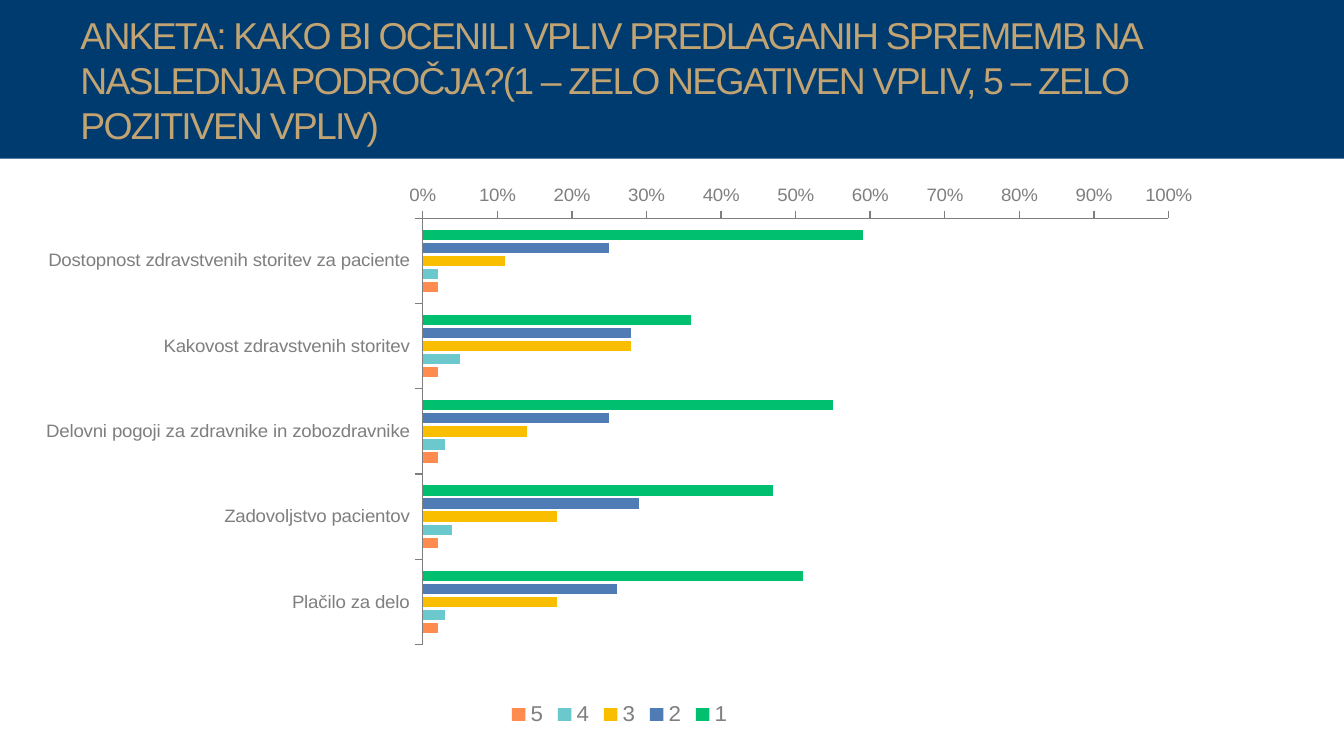
from lxml import etree
from pptx import Presentation
from pptx.chart.data import CategoryChartData
from pptx.dml.color import RGBColor
from pptx.enum.chart import (XL_CHART_TYPE, XL_LEGEND_POSITION,
                             XL_TICK_LABEL_POSITION, XL_TICK_MARK)
from pptx.enum.shapes import MSO_SHAPE
from pptx.enum.text import MSO_ANCHOR
from pptx.oxml.ns import qn
from pptx.util import Inches, Pt

RECT = MSO_SHAPE.RECTANGLE
MIDDLE = MSO_ANCHOR.MIDDLE
BAR = XL_CHART_TYPE.BAR_CLUSTERED
BOTTOM = XL_LEGEND_POSITION.BOTTOM
LOW = XL_TICK_LABEL_POSITION.LOW
OUTSIDE, NO_TICK = XL_TICK_MARK.OUTSIDE, XL_TICK_MARK.NONE

NAVY = RGBColor(0x00, 0x3B, 0x70)
GOLD = RGBColor(0xC2, 0xA3, 0x72)
GREY = RGBColor(0x7F, 0x7F, 0x7F)
INK = RGBColor(0x2F, 0x2B, 0x20)
GREEN = RGBColor(0x00, 0xBF, 0x6F)
BLUE = RGBColor(0x50, 0x7C, 0xB6)
YELLOW = RGBColor(0xF9, 0xBE, 0x00)
TEAL = RGBColor(0x6B, 0xC8, 0xCD)
ORANGE = RGBColor(0xFF, 0x8B, 0x4F)

WIDTH = 10
HEIGHT = WIDTH * 9 / 16

TITLE = ("ANKETA: KAKO BI OCENILI VPLIV PREDLAGANIH SPREMEMB NA NASLEDNJA "
         "PODROČJA?(1 – ZELO NEGATIVEN VPLIV, 5 – ZELO POZITIVEN VPLIV)")
AREAS = ["Dostopnost zdravstvenih storitev za paciente",
         "Kakovost zdravstvenih storitev",
         "Delovni pogoji za zdravnike in zobozdravnike",
         "Zadovoljstvo pacientov",
         "Plačilo za delo"]
RATINGS = [("1", GREEN, (0.59, 0.36, 0.55, 0.47, 0.51)),
           ("2", BLUE, (0.25, 0.28, 0.25, 0.29, 0.26)),
           ("3", YELLOW, (0.11, 0.28, 0.14, 0.18, 0.18)),
           ("4", TEAL, (0.02, 0.05, 0.03, 0.04, 0.03)),
           ("5", ORANGE, (0.02, 0.02, 0.02, 0.02, 0.02))]


def set_all(obj, values):
    for name, value in values.items():
        setattr(obj, name, value)


class Deck:
    """Slide style; places are given as shares of the slide's size."""
    font = "Arial"

    def __init__(self):
        self.prs = Presentation()
        self.prs.slide_width, self.prs.slide_height = Inches(WIDTH), Inches(HEIGHT)
        self.s = self.prs.slides.add_slide(self.prs.slide_layouts[6])

    def place(self, x, y, w, h):
        return [Inches(round(share * size, 2)) for share, size in
                zip((x, y, w, h), (WIDTH, HEIGHT, WIDTH, HEIGHT))]

    def style(self, font, size, color):
        set_all(font, {"name": self.font, "size": Pt(size), "bold": False})
        font.color.rgb = color

    def band(self, at, color):
        sp = self.s.shapes.add_shape(RECT, *self.place(*at))
        sp.shadow.inherit = False
        sp.fill.solid()
        sp.fill.fore_color.rgb = color
        sp.line.fill.background()

    def title(self, at, text, size, color):
        tf = self.s.shapes.add_textbox(*self.place(*at)).text_frame
        set_all(tf, {"word_wrap": True, "vertical_anchor": MIDDLE})
        p = tf.paragraphs[0]
        r = p.add_run()
        r.text = text
        self.style(r.font, size, color)
        r.font._element.set("spc", "-100")

    def axis(self, axis, values):
        set_all(axis, {"has_major_gridlines": False, "major_tick_mark": OUTSIDE,
                       "minor_tick_mark": NO_TICK, **values})
        self.style(axis.tick_labels.font, 10, GREY)
        axis.format.line.color.rgb = GREY
        axis.format.line.width = Pt(0.75)

    def bar_chart(self, at, cats, series, plot_at):
        data = CategoryChartData(number_format="0%")
        data.categories = cats
        for name, _, vals in series:
            data.add_series(name, vals)
        chart = self.s.shapes.add_chart(BAR, *self.place(*at), data).chart
        set_all(chart, {"has_title": False, "has_legend": True})
        self.style(chart.font, 18, INK)

        # Bars
        plot = chart.plots[0]
        set_all(plot, {"gap_width": 219, "overlap": -27, "vary_by_categories": False})
        for bars, (_, color, _) in zip(plot.series, series):
            bars.format.fill.solid()
            bars.format.fill.fore_color.rgb = color
            bars.invert_if_negative = False

        # Axes: first category on top, percentages after the last category
        self.axis(chart.category_axis, {"reverse_order": True,
                                        "crosses_at": len(cats) + 1,
                                        "tick_label_position": LOW})
        self.axis(chart.value_axis, {"minimum_scale": 0, "maximum_scale": 1,
                                     "major_unit": 0.1})
        labels = chart.value_axis.tick_labels
        set_all(labels, {"number_format": "0%", "number_format_is_linked": False})

        # Legend
        set_all(chart.legend, {"position": BOTTOM, "include_in_layout": False})
        self.style(chart.legend.font, 12, GREY)
        self.fix_plot(chart, plot_at)

    def fix_plot(self, chart, at):
        area = chart._chartSpace.find(".//" + qn("c:plotArea"))
        for old in area.findall(qn("c:layout")):
            area.remove(old)
        layout = etree.Element(qn("c:layout"))
        manual = etree.SubElement(layout, qn("c:manualLayout"))
        parts = [("layoutTarget", "inner"), ("xMode", "edge"), ("yMode", "edge"),
                 *zip("xywh", at)]
        for tag, value in parts:
            etree.SubElement(manual, qn("c:" + tag)).set("val", str(value))
        area.insert(0, layout)


def main():
    deck = Deck()
    # Header
    deck.band((0, 0, 1, 0.21), NAVY)
    deck.title((0.05, 0.021, 0.818, 0.167), TITLE, 20, GOLD)
    # Survey results
    deck.bar_chart((0.017, 0.245, 0.888, 0.722), AREAS, RATINGS,
                   (0.335, 0.02, 0.625, 0.815))
    deck.prs.save("out.pptx")


if __name__ == "__main__":
    main()
